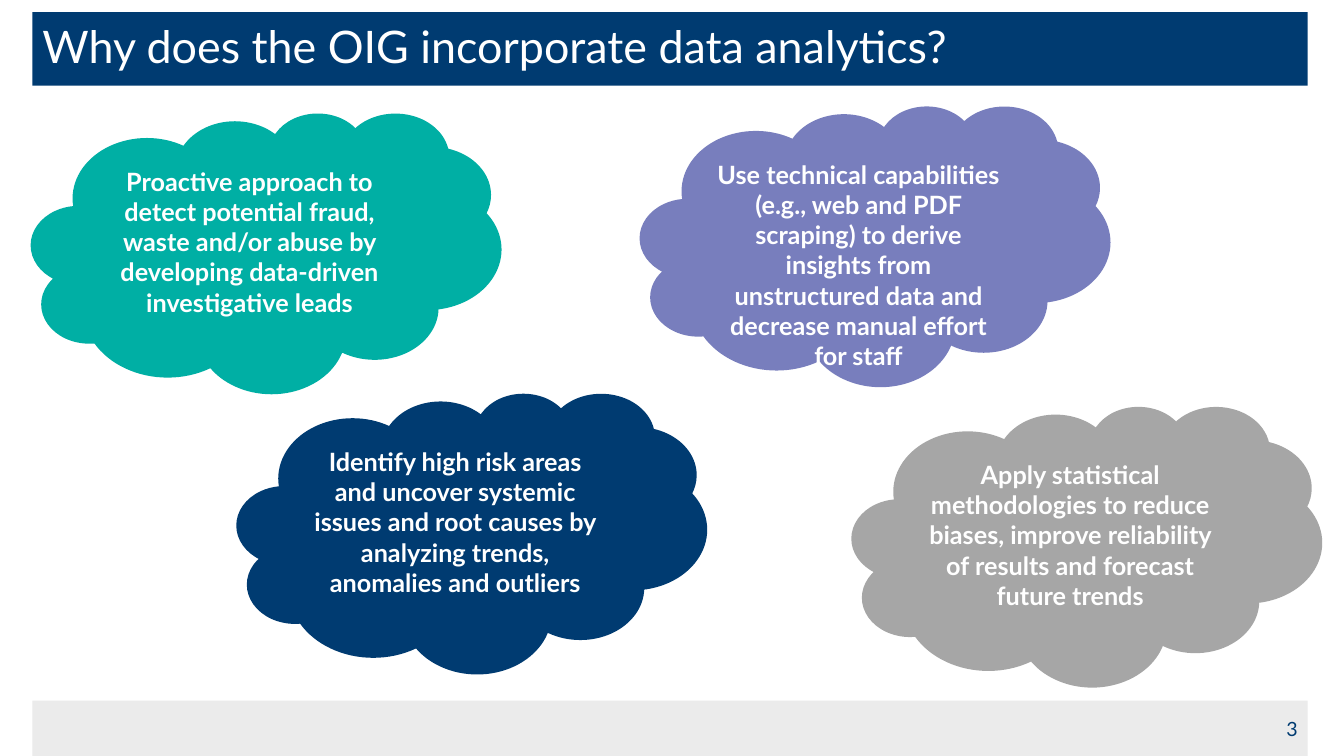
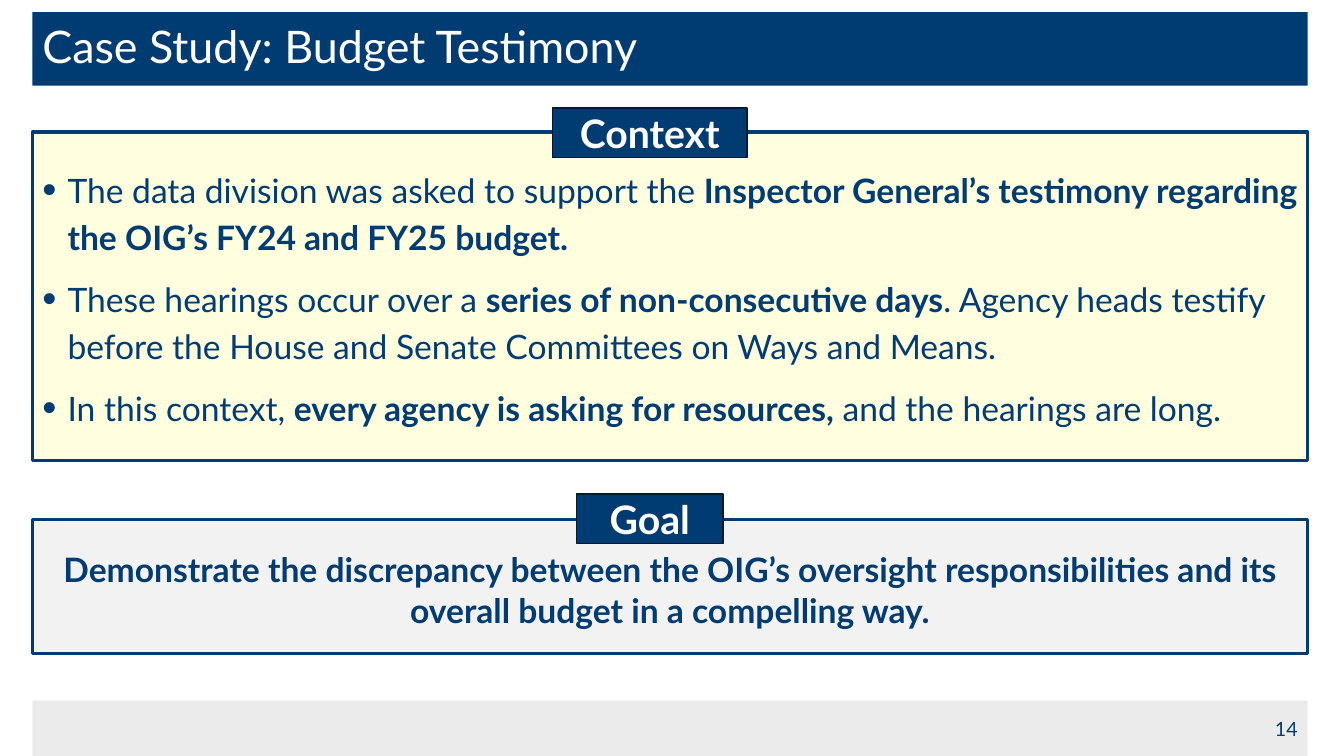
from typing import NamedTuple

from lxml.etree import SubElement
from pptx import Presentation
from pptx.dml.color import RGBColor
from pptx.enum.shapes import MSO_SHAPE as Kind
from pptx.enum.text import MSO_ANCHOR as Anchor, MSO_AUTO_SIZE as Auto, PP_ALIGN as Align
from pptx.oxml.ns import qn
from pptx.util import Emu, Pt

PX = 9144  # EMU per px, 100 px to the inch
FONT = "Lato"
NAVY = RGBColor(0x00, 0x3B, 0x71)
INK = RGBColor(0x00, 0x1A, 0x32)
TEAL = RGBColor(0x00, 0xAF, 0xA4)
LILAC = RGBColor(0x78, 0x7E, 0xBD)
GRAY = RGBColor(0xA6, 0xA6, 0xA6)
BAND = RGBColor(0xEB, 0xEB, 0xEB)
PALE = RGBColor(0xF2, 0xF2, 0xF2)
CREAM = RGBColor(0xFF, 0xFF, 0xE0)
WHITE = RGBColor(0xFF, 0xFF, 0xFF)


class Box(NamedTuple):
    left: int
    top: int
    width: int
    height: int


class Cloud(NamedTuple):
    left: int
    top: int
    color: RGBColor
    text: str


class Tag(NamedTuple):
    box: Box
    text: str


LEFT, WIDE = 32, 1265
TITLE = Box(LEFT, 12, WIDE, 73)
FOOT = Box(LEFT, 695, WIDE, 55)
FACTS = Box(LEFT, 131, WIDE, 326)
GOAL = Box(LEFT, 515, WIDE, 133)
CLOUD_W, CLOUD_H = 464, 276

CLOUDS = [
    Cloud(32, 113, TEAL, "Proactive approach to detect potential fraud, waste and/or abuse "
          "by developing data-driven investigative leads"),
    Cloud(236, 391, NAVY, "Identify high risk areas and uncover systemic issues and root "
          "causes by analyzing trends, anomalies and outliers"),
    Cloud(636, 106, LILAC, "Use technical capabilities (e.g., web and PDF scraping) to derive "
          "insights from unstructured data and decrease manual effort for staff"),
    Cloud(846, 404, GRAY, "Apply statistical methodologies to reduce biases, improve "
          "reliability of results and forecast future trends"),
]
# Asterisks switch bold on and off.
POINTS = [
    "The data division was asked to support the *Inspector General’s testimony "
    "regarding the OIG’s FY24 and FY25 budget.*",
    "These hearings occur over a *series of non-consecutive days*. Agency heads "
    "testify before the House and Senate Committees on Ways and Means.",
    "In this context, *every agency is asking for resources,* and the hearings are long.",
]
TAGS = [Tag(Box(572, 490, 145, 49), "Goal"), Tag(Box(548, 107, 193, 49), "Context")]


def scale(box: Box) -> list[Emu]:
    return [Emu(side * PX) for side in box]


def paint(shape, fill: RGBColor, line: RGBColor | None = None, width: float = 1) -> None:
    shape.fill.solid()
    shape.fill.fore_color.rgb = fill
    if line is None:
        shape.line.fill.background()
    else:
        shape.line.color.rgb = line
        shape.line.width = Pt(width)


def bullet(para) -> None:
    props = para._p.get_or_add_pPr()
    props.set("marL", str(25 * PX))
    props.set("indent", str(-25 * PX))
    SubElement(props, qn("a:buSzPct"), val="120000")
    SubElement(props, qn("a:buChar"), char="•")


def write(shape, *texts: str, size: int, color: RGBColor = WHITE, bold: bool = False,
          align: Align = Align.CENTER, anchor: Anchor = Anchor.MIDDLE,
          inset: tuple[int, int, int, int] = (10, 5, 10, 5),
          space: float = 1.0, before: int = 0, dots: bool = False) -> None:
    frame = shape.text_frame
    frame.word_wrap = True
    frame.auto_size = Auto.NONE
    frame.vertical_anchor = anchor
    (frame.margin_left, frame.margin_top,
     frame.margin_right, frame.margin_bottom) = [Emu(gap * PX) for gap in inset]
    for row, text in enumerate(texts):
        para = frame.add_paragraph() if row else frame.paragraphs[0]
        para.alignment = align
        para.line_spacing = space
        para.space_before = Pt(before)
        if dots:
            bullet(para)
        for part, words in enumerate(text.split("*")):
            if words:
                run = para.add_run()
                run.text = words
                run.font.name = FONT
                run.font.size = Pt(size)
                run.font.bold = bold or part % 2 == 1
                run.font.color.rgb = color


def place(shape, box: Box) -> None:
    shape.left, shape.top, shape.width, shape.height = scale(box)


def draw(slide, box: Box, fill: RGBColor, line: RGBColor | None = None,
         width: float = 1, kind: Kind = Kind.RECTANGLE):
    shape = slide.shapes.add_shape(kind, *scale(box))
    shape.shadow.inherit = False
    paint(shape, fill, line, width)
    return shape


def start(deck, layout: int, title: str, page: int):
    """Add a slide with the shared title bar and footer band."""
    slide = deck.slides.add_slide(deck.slide_layouts[layout])
    head = slide.shapes.title
    place(head, TITLE)
    paint(head, NAVY)
    write(head, title, size=32, align=Align.LEFT, space=0.9)
    foot = draw(slide, FOOT, BAND)
    write(foot, str(page), size=14, color=NAVY, align=Align.RIGHT)
    return slide


def add_why(deck) -> None:
    slide = start(deck, 5, "Why does the OIG incorporate data analytics?", 3)
    for cloud in CLOUDS:
        box = Box(cloud.left, cloud.top, CLOUD_W, CLOUD_H)
        shape = draw(slide, box, cloud.color, cloud.color, 1.75, Kind.CLOUD)
        write(shape, cloud.text, size=18, bold=True, anchor=Anchor.TOP,
              inset=(10, 10, 10, 10))


def add_case(deck) -> None:
    slide = start(deck, 1, "Case Study: Budget Testimony", 14)
    facts = slide.placeholders[1]
    place(facts, FACTS)
    paint(facts, CREAM, NAVY, 2.25)
    write(facts, *POINTS, size=24, color=NAVY, align=Align.LEFT, anchor=Anchor.TOP,
          inset=(10, 30, 10, 10), space=1.18, before=10, dots=True)
    goal = draw(slide, GOAL, PALE, NAVY, 2.25)
    write(goal, "Demonstrate the discrepancy between the OIG’s oversight responsibilities "
          "and its overall budget in a compelling way.", size=24, color=NAVY, bold=True,
          anchor=Anchor.TOP, inset=(10, 30, 10, 5))
    for tag in TAGS:
        write(draw(slide, tag.box, NAVY, INK), tag.text, size=28, bold=True)


def main() -> None:
    deck = Presentation()
    deck.slide_width, deck.slide_height = Emu(1333 * PX), Emu(750 * PX)
    add_why(deck)
    add_case(deck)
    deck.save("out.pptx")


if __name__ == "__main__":
    main()
